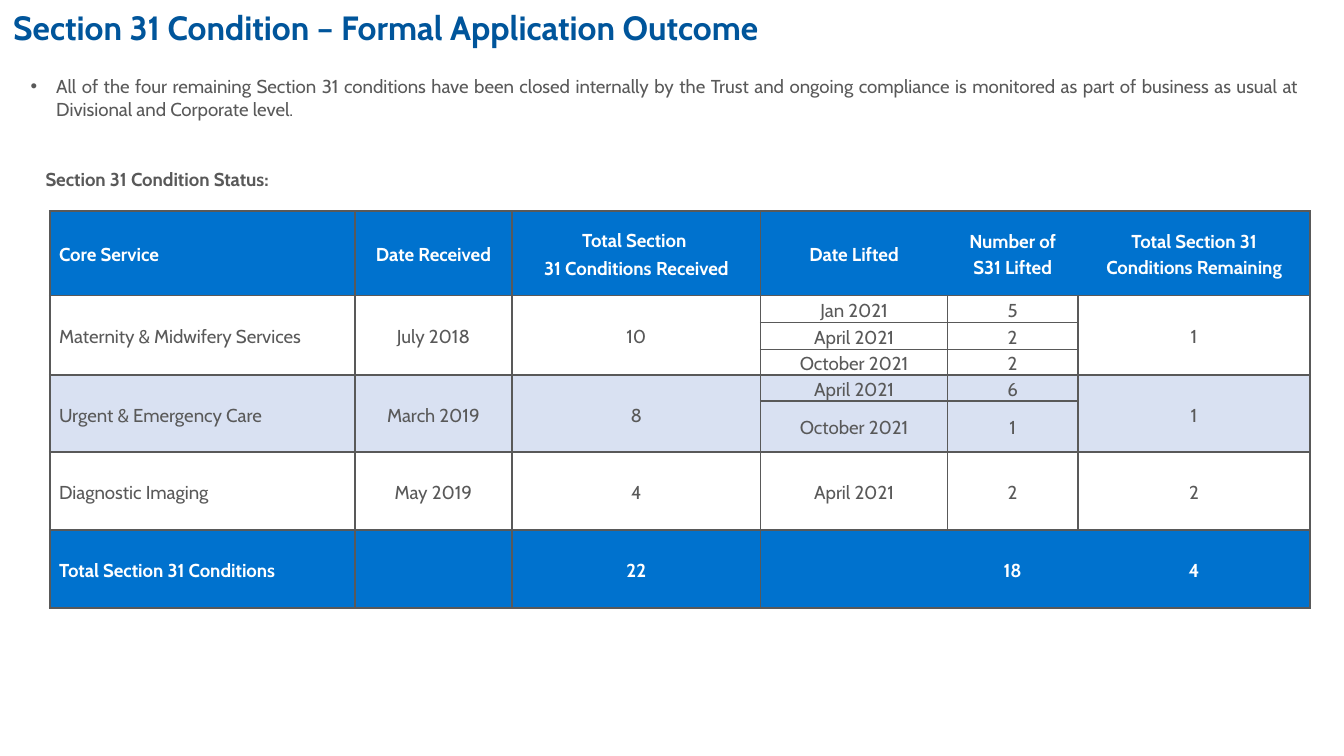
from lxml import etree
from pptx import Presentation
from pptx.dml.color import RGBColor
from pptx.enum.text import MSO_ANCHOR, PP_ALIGN
from pptx.oxml.ns import qn
from pptx.util import Inches, Pt

LEFT, CENTER, JUSTIFY = PP_ALIGN.LEFT, PP_ALIGN.CENTER, PP_ALIGN.JUSTIFY
MIDDLE = MSO_ANCHOR.MIDDLE

FONT = "Cabin"
NAVY = RGBColor(0x00, 0x55, 0x9B)
BLUE = RGBColor(0x00, 0x72, 0xCE)
PALE = RGBColor(0xD9, 0xE1, 0xF2)
GREY = RGBColor(0x59, 0x59, 0x59)
WHITE = RGBColor(0xFF, 0xFF, 0xFF)

COLUMN_WIDTHS = [2.27, 1.17, 1.85, 1.39, 0.97, 1.73]
ROW_HEIGHTS = [0.63, 0.2, 0.2, 0.19, 0.19, 0.38, 0.58, 0.58]
CONDITIONS = [
    ["Core Service", "Date Received", "Total Section \n31 Conditions Received",
     "Date Lifted", "Number of S31 Lifted", "Total Section 31 Conditions Remaining"],
    ["Maternity & Midwifery Services", "July 2018", "10", "Jan 2021", "5", "1"],
    ["", "", "", "April 2021", "2", ""],
    ["", "", "", "October 2021", "2", ""],
    ["Urgent & Emergency Care", "March 2019", "8", "April 2021", "6", "1"],
    ["", "", "", "October 2021", "1", ""],
    ["Diagnostic Imaging", "May 2019", "4", "April 2021", "2", "2"],
    ["Total Section 31 Conditions", "", "22", "", "18", "4"],
]
MIXED_LINES = {
    "31 Conditions Received": [
        ("31 Conditions", 10, True), (" ", 11, False), ("Received", 10, True)],
}
BANNER_ROWS = (0, 7)
SHADED_ROWS = (4, 5)
SERVICE_SPANS = [(1, 3), (4, 5)]
SHARED_COLUMNS = (0, 1, 2, 5)


def add_text(paragraph, text, size, color, bold=False):
    run = paragraph.add_run()
    run.text = text
    run.font.name = FONT
    run.font.size = Pt(size)
    run.font.bold = bold
    run.font.color.rgb = color


def add_label(slide, left, top, width, height):
    frame = slide.shapes.add_textbox(
        Inches(left), Inches(top), Inches(width), Inches(height)).text_frame
    frame.word_wrap = True
    return frame.paragraphs[0]


def set_bullet(paragraph, indent):
    properties = paragraph._p.get_or_add_pPr()
    properties.set("marL", str(Inches(indent)))
    properties.set("indent", str(-Inches(indent)))
    etree.SubElement(properties, qn("a:buFont"), typeface="Arial")
    etree.SubElement(properties, qn("a:buChar"), char="•")


def set_borders(cell, hidden_sides):
    properties = cell._tc.get_or_add_tcPr()
    for position, side in enumerate(("lnL", "lnR", "lnT", "lnB")):
        line = etree.Element(qn(f"a:{side}"), w=str(Pt(1)))
        if side in hidden_sides:
            etree.SubElement(line, qn("a:noFill"))
        else:
            fill = etree.SubElement(line, qn("a:solidFill"))
            etree.SubElement(fill, qn("a:srgbClr"), val=str(GREY))
        properties.insert(position, line)


def fill_cell(cell, text, row, column):
    banner = row in BANNER_ROWS
    cell.margin_left = cell.margin_right = Inches(0.07)
    cell.margin_top = cell.margin_bottom = 0
    cell.vertical_anchor = MIDDLE
    if banner or row in SHADED_ROWS:
        cell.fill.solid()
        cell.fill.fore_color.rgb = BLUE if banner else PALE
    else:
        cell.fill.background()

    hidden_sides = []
    if banner and column in (3, 4):
        hidden_sides.append("lnR")
    if banner and column in (4, 5):
        hidden_sides.append("lnL")
    set_borders(cell, hidden_sides)

    frame = cell.text_frame
    for index, line in enumerate(text.split("\n")):
        paragraph = frame.add_paragraph() if index else frame.paragraphs[0]
        paragraph.alignment = CENTER if column else LEFT
        paragraph.line_spacing = 1.15
        if line:
            for words, size, bold in MIXED_LINES.get(line, [(line, 10, banner)]):
                add_text(paragraph, words, size, WHITE if banner else GREY, bold)
        else:
            etree.SubElement(paragraph._p, qn("a:endParaRPr"), sz="1000")


def add_conditions_table(slide):
    table = slide.shapes.add_table(
        len(ROW_HEIGHTS), len(COLUMN_WIDTHS), Inches(0.37), Inches(1.57),
        Inches(sum(COLUMN_WIDTHS)), Inches(sum(ROW_HEIGHTS))).table
    table.horz_banding = False
    table.first_row = False
    for column, width in zip(table.columns, COLUMN_WIDTHS):
        column.width = Inches(width)
    for row, height in zip(table.rows, ROW_HEIGHTS):
        row.height = Inches(height)
    for row, texts in enumerate(CONDITIONS):
        for column, text in enumerate(texts):
            fill_cell(table.cell(row, column), text, row, column)
    for first, last in SERVICE_SPANS:
        for column in SHARED_COLUMNS:
            table.cell(first, column).merge(table.cell(last, column))


def main():
    deck = Presentation()
    deck.slide_width = Inches(10)
    deck.slide_height = deck.slide_width * 9 // 16
    slide = deck.slides.add_slide(deck.slide_layouts[6])

    title = add_label(slide, 0, 0, 9.75, 0.46)
    add_text(title, "Section 31 Condition – Formal Application Outcome", 18, NAVY, True)

    add_conditions_table(slide)

    status_heading = add_label(slide, 0.24, 1.2, 9.62, 0.27)
    add_text(status_heading, "Section 31 Condition Status:", 10, GREY, True)

    summary = add_label(slide, 0.13, 0.51, 9.62, 0.44)
    set_bullet(summary, 0.19)
    summary.alignment = JUSTIFY
    add_text(summary, "All of the four remaining Section 31 conditions have been closed "
             "internally by the Trust and ongoing compliance is monitored as part of "
             "business as usual at Divisional and Corporate level. ", 10, GREY)

    deck.save("out.pptx")


if __name__ == "__main__":
    main()
